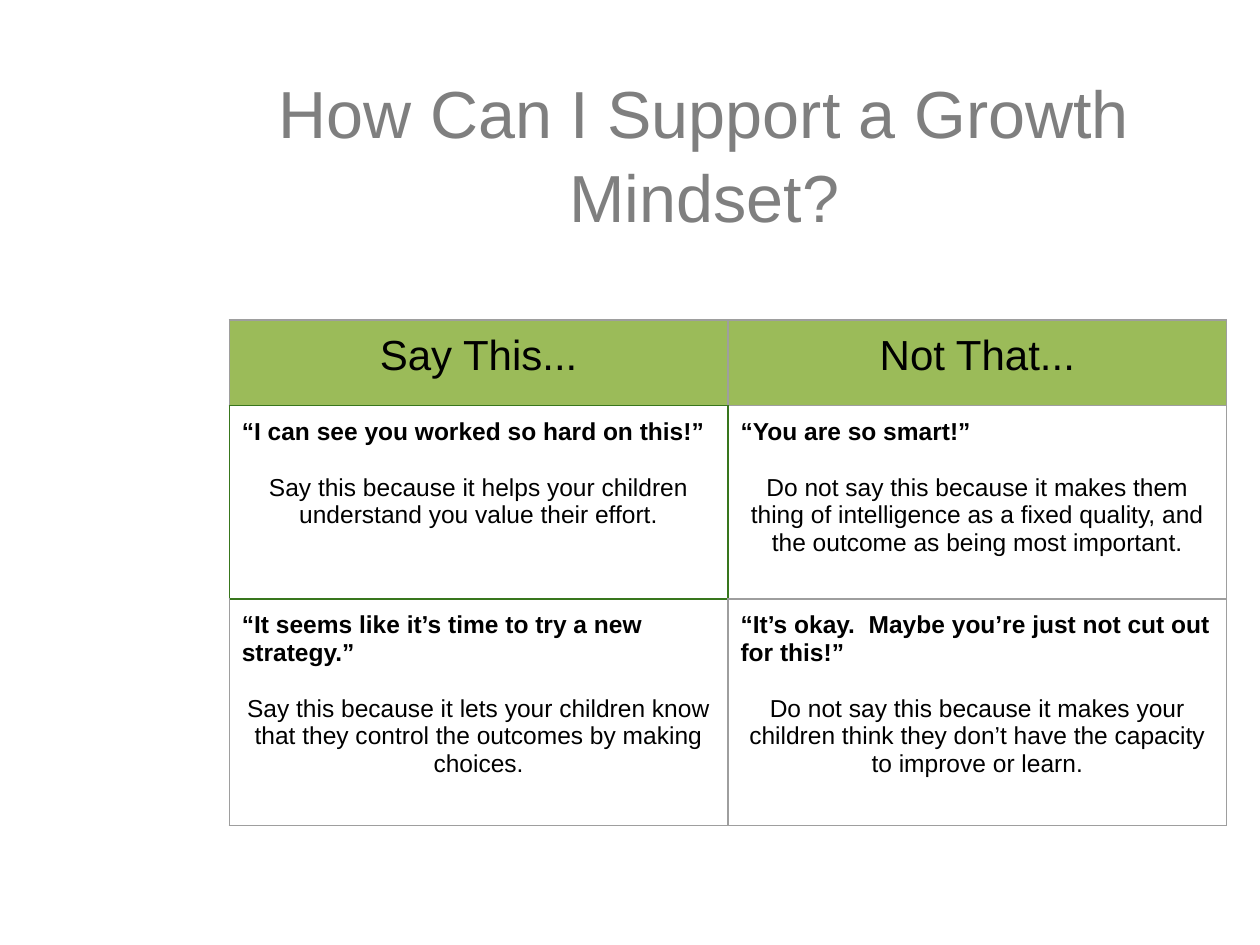
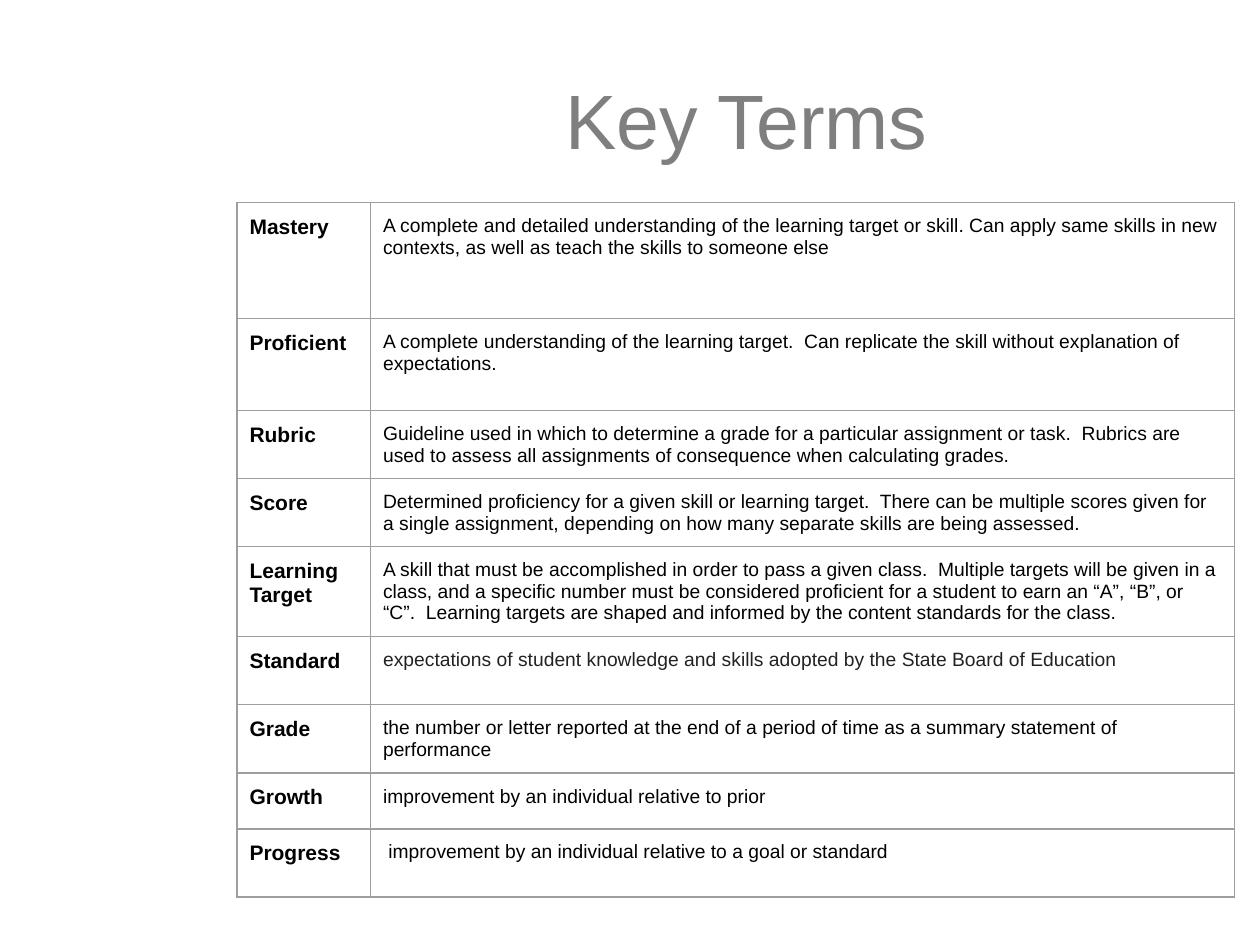
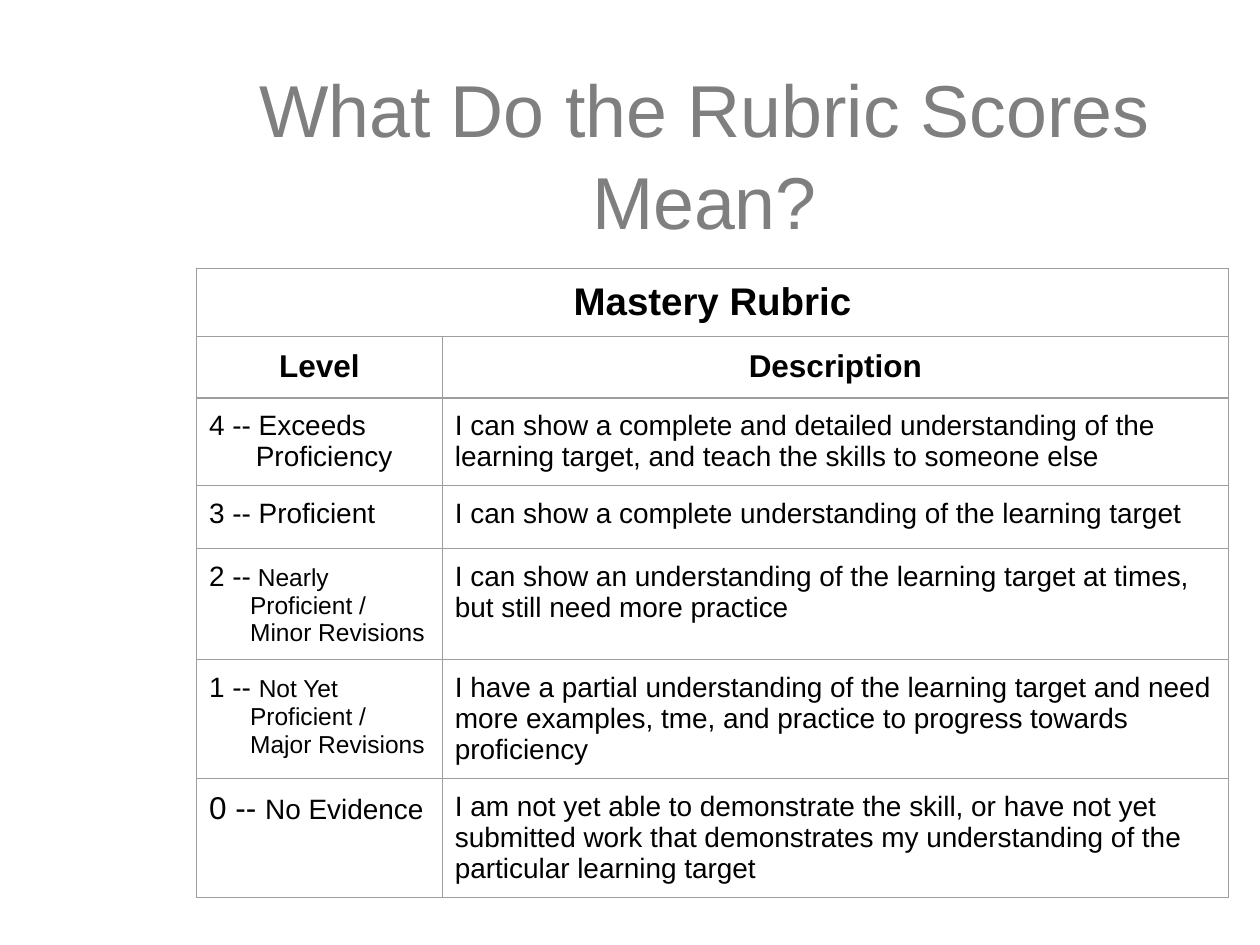
from dataclasses import dataclass

import pptx
import pptx.dml.color
import pptx.enum.text
import pptx.oxml
import pptx.oxml.ns
import pptx.util

Pt = pptx.util.Pt
ALIGN = pptx.enum.text.PP_ALIGN
ANCHOR = pptx.enum.text.MSO_ANCHOR


@dataclass(frozen=True)
class Theme:
    font: str = "Arial"
    title: str = "7F7F7F"
    text: str = "000000"
    soft_text: str = "222222"
    grid: str = "9E9E9E"
    focus: str = "38761D"
    header: str = "9BBB59"
    # Type sizes
    heading: float = 24
    caption: float = 22
    column_head: float = 18
    level: float = 16
    body: float = 14
    term: float = 12
    definition: float = 11
    # Measures
    margin: float = 7.2
    line: float = 0.75
    title_spacing: float = 1.05


THEME = Theme()


@dataclass
class Para:
    """A paragraph; its content is a text or a list of (text, size) spans."""
    content: object
    size: float = THEME.body
    bold: bool = False
    centered: bool = False
    color: str = THEME.text
    indent: float = 0
    before: float = 0


class SlideBuilder:
    def __init__(self, theme):
        self.theme = theme
        self.deck = pptx.Presentation()
        self.deck.slide_width, self.deck.slide_height = Pt(720), Pt(540)
        self.page = None

    def style(self, font, size, color, bold=False):
        font.name, font.size, font.bold = self.theme.font, Pt(size), bold
        font.color.rgb = pptx.dml.color.RGBColor.from_string(color)

    def titled_page(self, text, size, left=131, top=41.8, width=543, inset=3.6):
        self.page = self.deck.slides.add_slide(self.deck.slide_layouts[5])
        box = self.page.shapes.title
        box.left, box.top, box.width, box.height = map(Pt, (left, top, width, 90))
        frame = box.text_frame
        frame.text = text
        frame.word_wrap = True
        frame.auto_size = pptx.enum.text.MSO_AUTO_SIZE.NONE
        frame.vertical_anchor = ANCHOR.MIDDLE
        frame.margin_left = frame.margin_right = Pt(self.theme.margin)
        frame.margin_top = frame.margin_bottom = Pt(inset)
        para = frame.paragraphs[0]
        para.alignment = ALIGN.CENTER
        para.line_spacing = self.theme.title_spacing
        self.style(para.font, size, self.theme.title)

    def table(self, left, top, columns, heights, rows):
        """Add a grid; each row lists the paragraphs of its cells."""
        frame = self.page.shapes.add_table(
            len(heights), len(columns), Pt(left), Pt(top), Pt(sum(columns)), Pt(sum(heights)))
        table = frame.table
        table.first_row = table.horz_banding = False
        for column, width in zip(table.columns, columns):
            column.width = Pt(width)
        for row, height in zip(table.rows, heights):
            row.height = Pt(height)
        for cell in table.iter_cells():
            cell.margin_left = cell.margin_right = Pt(self.theme.margin)
            cell.margin_top = cell.margin_bottom = Pt(self.theme.margin)
            self.borders(cell, "LRTB", self.theme.grid)
            cell.fill.background()
        for row, contents in zip(table.rows, rows):
            for cell, paras in zip(row.cells, contents):
                self.fill_text(cell.text_frame, paras)
        return table

    def fill_text(self, frame, paras):
        for index, item in enumerate(paras):
            para = frame.paragraphs[0] if index == 0 else frame.add_paragraph()
            para.alignment = ALIGN.CENTER if item.centered else ALIGN.LEFT
            if item.before:
                para.space_before = Pt(item.before)
            if item.indent:
                para._p.get_or_add_pPr().set("marL", str(Pt(item.indent)))
            if isinstance(item.content, str):
                para.add_run().text = item.content
                self.style(para.font, item.size, item.color, item.bold)
                continue
            for text, size in item.content:
                span = para.add_run()
                span.text = text
                self.style(span.font, size, item.color, item.bold)

    def borders(self, cell, sides, color):
        properties = cell._tc.get_or_add_tcPr()
        for side in sides:
            old = properties.find(pptx.oxml.ns.qn(f"a:ln{side}"))
            line = pptx.oxml.parse_xml(
                f'<a:ln{side} {pptx.oxml.ns.nsdecls("a")} w="{Pt(self.theme.line)}">'
                f'<a:solidFill><a:srgbClr val="{color}"/></a:solidFill></a:ln{side}>')
            if old is None:
                properties.append(line)
            else:
                properties.replace(old, line)

    def shade(self, cell, color):
        cell.fill.solid()
        cell.fill.fore_color.rgb = pptx.dml.color.RGBColor.from_string(color)


def phrase(quote, reason):
    return [Para(quote, bold=True), Para(reason, centered=True, before=16.1)]


def growth_mindset(builder):
    builder.titled_page("How Can I Support a Growth Mindset?", 38)
    heads = ["Say This...", "Not That..."]
    rows = [
        [[Para(head, THEME.heading, centered=True)] for head in heads],
        [phrase("“I can see you worked so hard on this!”",
                "Say this because it helps your children understand you value their effort."),
         phrase("“You are so smart!”",
                "Do not say this because it makes them thing of intelligence as a fixed "
                "quality, and the outcome as being most important.")],
        [phrase("“It seems like it’s time to try a new strategy.”",
                "Say this because it lets your children know that they control the outcomes "
                "by making choices."),
         phrase("“It’s okay.  Maybe you’re just not cut out for this!”",
                "Do not say this because it makes your children think they don’t have the "
                "capacity to improve or learn.")],
    ]
    table = builder.table(131, 182.9, [285, 285], [48.8, 110.6, 129.6], rows)
    for cell in table.rows[0].cells:
        builder.shade(cell, THEME.header)
    # Green frame round the first phrase, shared with its neighbours
    for row, column, sides in [(1, 0, "LRTB"), (0, 0, "B"), (1, 1, "L"), (2, 0, "T")]:
        builder.borders(table.cell(row, column), sides, THEME.focus)


def key_terms(builder):
    builder.titled_page("Key Terms", 44, left=169, top=21.6, width=515, inset=7.2)
    terms = {
        "Mastery": "A complete and detailed understanding of the learning target or skill. Can "
                   "apply same skills in new contexts, as well as teach the skills to someone else",
        "Proficient": "A complete understanding of the learning target.  Can replicate the skill "
                      "without explanation of expectations.",
        "Rubric": "Guideline used in which to determine a grade for a particular assignment or "
                  "task.  Rubrics are used to assess all assignments of consequence when "
                  "calculating grades.",
        "Score": "Determined proficiency for a given skill or learning target.  There can be "
                 "multiple scores given for a single assignment, depending on how many separate "
                 "skills are being assessed.",
        "Learning Target": "A skill that must be accomplished in order to pass a given class.  "
                           "Multiple targets will be given in a class, and a specific number must "
                           "be considered proficient for a student to earn an “A”, “B”, or “C”.  "
                           "Learning targets are shaped and informed by the content standards "
                           "for the class.",
        "Standard": "expectations of student knowledge and skills adopted by the State Board of "
                    "Education",
        "Grade": "the number or letter reported at the end of a period of time as a summary "
                 "statement of performance",
        "Growth": "improvement by an individual relative to prior",
        "Progress": "improvement by an individual relative to a goal or standard",
    }
    rows = [[[Para(term, THEME.term, bold=True)],
             [Para(meaning, THEME.definition,
                   color=THEME.soft_text if term == "Standard" else THEME.text,
                   indent=3 if term == "Progress" else 0)]]
            for term, meaning in terms.items()]
    heights = [66.2, 52.6, 38.9, 38.9, 51.4, 38.9, 38.9, 32, 38.9]
    builder.table(135.4, 115.9, [76.3, 493.9], heights, rows)


def rubric_scores(builder):
    builder.titled_page("What Do the Rubric Scores Mean?", 42)
    level, body = THEME.level, THEME.body

    def revisions(mark, first, last):
        return [Para([(mark, level), (first, body)]),
                Para("Proficient /", indent=23.4), Para(last, indent=23.4)]

    levels = [
        ([Para("4 -- Exceeds", level), Para("Proficiency", level, indent=26.7)],
         "I can show a complete and detailed understanding of the learning target, and teach "
         "the skills to someone else"),
        ([Para("3 -- Proficient", level)],
         "I can show a complete understanding of the learning target"),
        (revisions("2 --", " Nearly", "Minor Revisions"),
         "I can show an understanding of the learning target at times, but still need more "
         "practice"),
        (revisions("1 -- ", "Not Yet", "Major Revisions"),
         "I have a partial understanding of the learning target and need more examples, tme, "
         "and practice to progress towards proficiency"),
        ([Para([("0 -- ", THEME.column_head), ("No Evidence", level)])],
         "I am not yet able to demonstrate the skill, or have not yet submitted work that "
         "demonstrates my understanding of the particular learning target"),
    ]
    rows = [
        [[Para("Mastery Rubric", THEME.caption, bold=True, centered=True)]],
        [[Para(head, THEME.column_head, bold=True, centered=True)]
         for head in ("Level", "Description")],
    ] + [[name, [Para(meaning, level)]] for name, meaning in levels]
    heights = [39, 35, 50, 36, 63.4, 67.8, 67.8]
    table = builder.table(112.3, 153.4, [140.4, 449.3], heights, rows)
    table.cell(0, 0).merge(table.cell(0, 1))


def main():
    builder = SlideBuilder(THEME)
    growth_mindset(builder)
    key_terms(builder)
    rubric_scores(builder)
    builder.deck.save("out.pptx")


if __name__ == "__main__":
    main()
